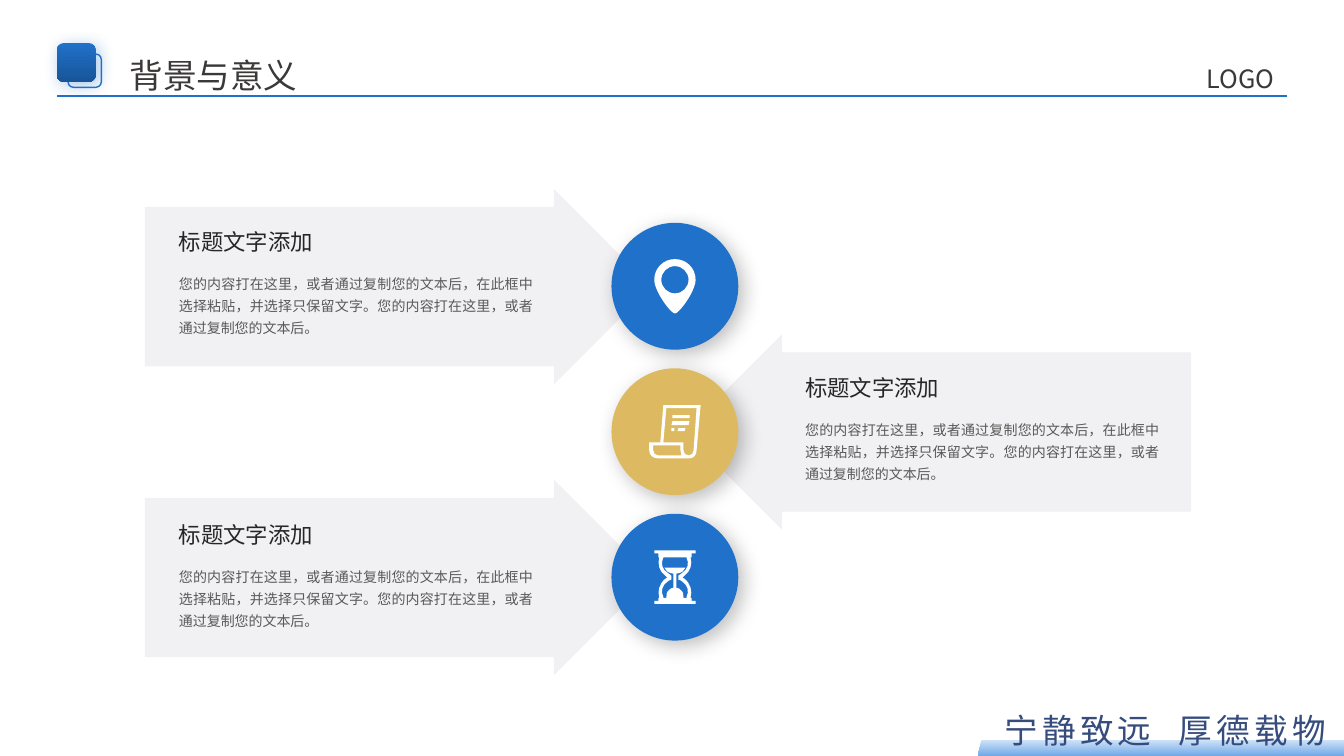
from lxml import etree
from pptx import Presentation
from pptx import util as u
from pptx.dml.color import RGBColor
from pptx.enum import shapes, text
from pptx.oxml.ns import qn

BLUE = RGBColor(0x20, 0x71, 0xCA)
DEEP_BLUE = RGBColor(0x18, 0x55, 0x98)
PALE_BLUE = RGBColor(0xCF, 0xE2, 0xF7)
SKY_BLUE = RGBColor(0x70, 0xA9, 0xE8)
NAVY = RGBColor(0x36, 0x4C, 0x7D)
GOLD = RGBColor(0xDD, 0xBA, 0x61)
GREY = RGBColor(0xF1, 0xF1, 0xF3)
WHITE = RGBColor(0xFF, 0xFF, 0xFF)
BLACK = RGBColor(0, 0, 0)
HEADER = RGBColor(0x3B, 0x38, 0x38)
DARK = RGBColor(0x26, 0x26, 0x26)
BODY = RGBColor(0x59, 0x59, 0x59)
FONT = "Noto Sans CJK SC"
AUTO = shapes.MSO_SHAPE
ALIGN = text.PP_ALIGN

presentation = Presentation()
presentation.slide_width, presentation.slide_height = u.Pt(960), u.Pt(540)
slide = presentation.slides.add_slide(presentation.slide_layouts[6])


def style_shape(shape, fills=(), line=None, shadow=None):
    """One fill is solid, two run from top to bottom; shadow is colour, opacity, blur, distance."""
    if len(fills) == 2:
        shape.fill.gradient()
        shape.fill.gradient_angle = 270
        for stop, color in zip(shape.fill.gradient_stops, fills):
            stop.color.rgb = color
    elif fills:
        shape.fill.solid()
        shape.fill.fore_color.rgb = fills[0]
    else:
        shape.fill.background()
    if line:
        shape.line.color.rgb = line
        shape.line.width = u.Pt(1)
    else:
        shape.line.fill.background()
    shape.shadow.inherit = False
    if shadow:
        color, opacity, blur, distance = shadow
        effects = shape._element.spPr.find(qn("a:effectLst"))
        outer = etree.SubElement(effects, qn("a:outerShdw"), blurRad=str(u.Pt(blur)),
                                 dist=str(u.Pt(distance)), dir="2700000",
                                 algn="tl", rotWithShape="0")
        value = etree.SubElement(outer, qn("a:srgbClr"), val=str(color))
        etree.SubElement(value, qn("a:alpha"), val=str(opacity * 1000))


def add_text(words, box, size, color, align, spacing=None, track=None, **frame_format):
    frame = slide.shapes.add_textbox(*map(u.Pt, box)).text_frame
    settings = {"word_wrap": True, "auto_size": text.MSO_AUTO_SIZE.SHAPE_TO_FIT_TEXT}
    for name, value in (settings | frame_format).items():
        setattr(frame, name, value)
    paragraph = frame.paragraphs[0]
    paragraph.alignment = align
    paragraph.line_spacing = spacing
    run = paragraph.add_run()
    run.text = words
    for name, value in {"name": FONT, "size": u.Pt(size)}.items():
        setattr(run.font, name, value)
    run.font.color.rgb = color
    properties = run._r.get_or_add_rPr()
    etree.SubElement(properties, qn("a:ea"), typeface=FONT)
    if track:
        properties.set("spc", str(track * 100))


# Header rule
rule = slide.shapes.add_connector(shapes.MSO_CONNECTOR.STRAIGHT,
                                  u.Pt(919.5), u.Pt(68.5), u.Pt(40.5), u.Pt(68.5))
rule.line.color.rgb = BLUE
rule.line.width = u.Pt(1.5)
etree.SubElement(rule._element.spPr, qn("a:effectLst"))

# Header emblem and footer band
for kind, box, look in [
    (AUTO.ROUNDED_RECTANGLE, (48.6, 38.6, 23.8, 23.8), {"line": BLUE}),
    (AUTO.ROUNDED_RECTANGLE, (40.7, 30.8, 27.6, 27.6),
     {"fills": (BLUE, DEEP_BLUE), "shadow": (BLUE, 40, 12, 3)}),
    (AUTO.PARALLELOGRAM, (698.4, 528.5, 298.8, 11.5), {"fills": (PALE_BLUE, SKY_BLUE)}),
]:
    style_shape(slide.shapes.add_shape(kind, *map(u.Pt, box)), **look)

# Header and footer words
for left, words in [(687.6, "宁静致远"), (812, "厚德载物")]:
    add_text(words, (left, 503.6, 165, 36), 24, NAVY, ALIGN.CENTER, track=3)
no_margins = dict.fromkeys(("margin_left", "margin_top", "margin_right", "margin_bottom"), 0)
add_text("LOGO", (861.8, 45, 57.6, 21.6), 18, HEADER, ALIGN.JUSTIFY, **no_margins)
add_text("背景与意义", (92.5, 39.2, 134.6, 28.8), 24, HEADER, ALIGN.JUSTIFY, **no_margins)

# Icon outlines around a centre: pairs are corners, sixes are cubic curves.
# A mirrored icon gives only its right half.
ICON_UNIT = 0.72
PIN = [
    [(0, -27), (11.5, -27, 20.5, -18, 20.5, -6.5), (20.5, 5, 4, 27, 0, 27)],
    [(0, -20), (7.5, -20, 13.5, -14, 13.5, -6.5), (13.5, 1, 7.5, 7, 0, 7)],
]
SCROLL = [
    [(25.5, -26.5), (21.5, 18.5), (21.5, 23.5, 18.5, 26.5, 13.5, 26.5), (-16.5, 26.5),
     (-21.5, 26.5, -25.5, 23.5, -25.5, 18.5), (-25.5, 10.5), (-14.5, 10.5), (-11.5, -26.5)],
    [(6.5, 23.5), (5.5, 21.5, 5.5, 20.5, 5.5, 18.5), (5.5, 13.5), (-21.5, 13.5),
     (-21.5, 18.5), (-21.5, 21.5, -19.5, 23.5, -16.5, 23.5)],
    [(21.5, -23.5), (-8.5, -23.5), (-11.5, 10.5), (8.5, 10.5), (8.5, 18.5),
     (8.5, 21.5, 10.5, 23.5, 13.5, 23.5), (16.5, 23.5, 18.5, 21.5, 18.5, 18.5)],
    [(14.5, -13.5), (-2.5, -13.5), (-2.5, -16.5), (14.5, -16.5)],
    [(13.5, -6.5), (14.5, -10.5), (-2.5, -10.5), (-3.5, -6.5)],
    [(2.5, -0.5), (9.5, -0.5), (10.5, -3.5), (3.5, -3.5)],
    [(-0.5, -3.5), (-3.5, -3.5), (-3.5, -0.5), (-0.5, -0.5)],
]
HOURGLASS = [
    [(0, -26.5), (20.5, -26.5), (20.5, -23.5), (16.5, -23.5), (16.5, -19.5), (15.5, -19.5),
     (17.5, -13.5, 15.5, -5.5, 9.5, -1.5), (7.5, 0.5), (9.5, 1.5),
     (15.5, 6.5, 17.5, 13.5, 15.5, 20.5), (16.5, 20.5), (16.5, 23.5), (20.5, 23.5),
     (20.5, 26.5), (0, 26.5)],
    [(0, -19.5), (11.5, -19.5), (14.5, -13.5, 12.5, -7.5, 7.5, -4.5),
     (6.5, -3.5, 4.5, -2.5, 3.5, -1.5), (3.5, 2.5), (4.5, 2.5, 6.5, 3.5, 7.5, 4.5),
     (12.5, 7.5, 14.5, 14.5, 11.5, 19.5), (11.5, 20.5), (8.5, 20.5),
     (8.5, 17.5, 8.5, 14.5, 5.5, 12.5), (4.5, 11.5, 3.5, 10.5, 1.5, 10.5), (1.5, -3.5),
     (3.5, -3.5, 5.5, -4.5, 7.5, -5.5), (8.5, -6.5, 9.5, -8.5, 10.5, -9.5), (0, -9.5)],
]

# Steps: arrow kind, arrow left, text left, circle colour, icon, mirrored
STEPS = [
    (AUTO.RIGHT_ARROW, 103.4, 120.7, BLUE, PIN, True),
    (AUTO.LEFT_ARROW, 488.8, 568, GOLD, SCROLL, False),
    (AUTO.RIGHT_ARROW, 103.4, 120.7, BLUE, HOURGLASS, True),
]
PITCH, TEXT_PITCH = 103.9, 104.6
CIRCLE_LEFT, CIRCLE_TOP, DIAMETER = 436.8, 159.2, 90.6
STEP_BODY = ("您的内容打在这里，或者通过复制您的文本后，在此框中选择粘贴，并选择只保留文字。"
             "您的内容打在这里，或者通过复制您的文本后。")

# Arrows
for row, (kind, left, *_) in enumerate(STEPS):
    arrow = slide.shapes.add_shape(kind, *map(u.Pt, (left, 134.9 + row * PITCH, 362, 139.7)))
    arrow.adjustments[0], arrow.adjustments[1] = 0.815, 0.5
    style_shape(arrow, [GREY])

# Circles
for row, (_, _, _, color, _, _) in enumerate(STEPS):
    box = (CIRCLE_LEFT, CIRCLE_TOP + row * PITCH, DIAMETER, DIAMETER)
    circle = slide.shapes.add_shape(AUTO.OVAL, *map(u.Pt, box))
    style_shape(circle, [color], shadow=(BLACK, 25, 15, 5))

# Icons
for row, (*_, contours, mirrored) in enumerate(STEPS):
    builder, lengths = None, []
    for start, *segments in contours:
        points = [start]
        for segment in segments:
            points += zip(segment[::2], segment[1::2])
        sizes = [len(segment) // 2 for segment in segments]
        if mirrored:
            points += [(-x, y) for x, y in points[-2::-1]]
            sizes += sizes[::-1]
        lengths += sizes
        points = [(round(x * 10), round(y * 10)) for x, y in points]
        if builder is None:
            builder = slide.shapes.build_freeform(*points[0], scale=u.Pt(ICON_UNIT / 10))
        else:
            builder.move_to(*points[0])
        builder.add_line_segments(points[1:], close=True)
    icon = builder.convert_to_shape(u.Pt(CIRCLE_LEFT + DIAMETER / 2),
                                    u.Pt(CIRCLE_TOP + row * PITCH + DIAMETER / 2))
    style_shape(icon, [WHITE])

    # Join each three points of a curve into one cubic segment
    corners = iter(list(icon._element.iter(qn("a:lnTo"))))
    for length in lengths:
        group = [next(corners) for _ in range(length)]
        if length == 3:
            group[0].tag = qn("a:cubicBezTo")
            for corner in group[1:]:
                group[0].append(corner[0])
                corner.getparent().remove(corner)

# Step texts
for row, (_, _, left, *_) in enumerate(STEPS):
    shift = row * TEXT_PITCH
    add_text("标题文字添加", (left, 159 + shift, 113.8, 26.6), 16, DARK, ALIGN.LEFT,
             word_wrap=False, vertical_anchor=text.MSO_ANCHOR.MIDDLE)
    add_text(STEP_BODY, (left, 189.7 + shift, 267, 54.7), 10, BODY, ALIGN.JUSTIFY, spacing=1.3)

presentation.save("out.pptx")
